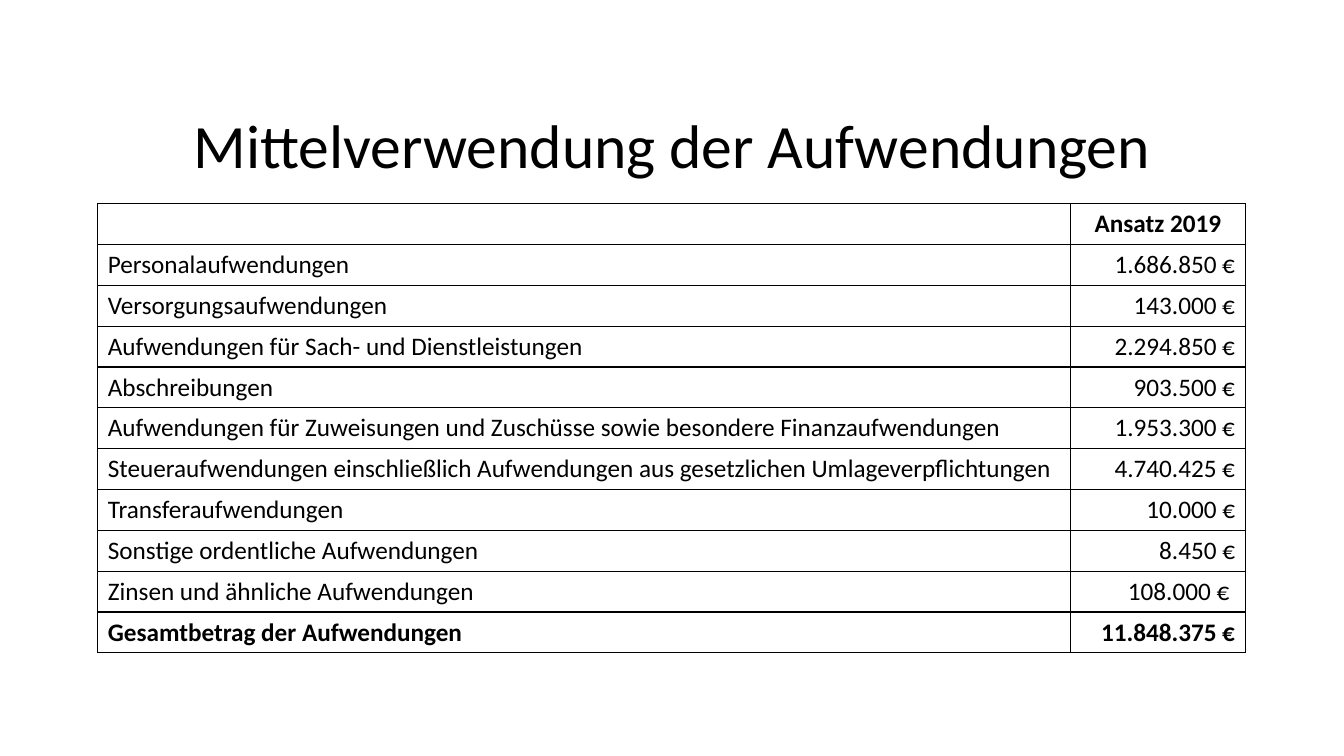
from dataclasses import dataclass

from lxml.etree import SubElement
from pptx import Presentation
from pptx.dml.color import RGBColor
from pptx.enum.text import MSO_ANCHOR as Anchor, PP_ALIGN as Align
from pptx.oxml.ns import qn
from pptx.slide import Slide
from pptx.table import _Cell as Cell
from pptx.text.text import TextFrame
from pptx.util import Inches, Pt

FONT = "Calibri"
BLACK = "000000"
TABLE_HEIGHT = 4.46
COLUMN_WIDTHS = (9.65, 1.73)


@dataclass(frozen=True)
class ExpenseRow:
    label: str
    amount: str
    bold: bool = False
    amount_align: Align = Align.RIGHT
    anchor: Anchor = Anchor.TOP


ROWS = (
    ExpenseRow("", "Ansatz 2019", bold=True, amount_align=Align.CENTER),
    ExpenseRow("Personalaufwendungen", "1.686.850 €"),
    ExpenseRow("Versorgungsaufwendungen", "143.000 €"),
    ExpenseRow("Aufwendungen für Sach- und Dienstleistungen", "2.294.850 €"),
    ExpenseRow("Abschreibungen", "903.500 €"),
    ExpenseRow("Aufwendungen für Zuweisungen und Zuschüsse sowie besondere Finanzaufwendungen",
               "1.953.300 €"),
    ExpenseRow("Steueraufwendungen einschließlich Aufwendungen aus gesetzlichen Umlageverpflichtungen",
               "4.740.425 €"),
    ExpenseRow("Transferaufwendungen", "10.000 €", anchor=Anchor.MIDDLE),
    ExpenseRow("Sonstige ordentliche Aufwendungen", "8.450 €", anchor=Anchor.MIDDLE),
    ExpenseRow("Zinsen und ähnliche Aufwendungen", "108.000 € "),
    ExpenseRow("Gesamtbetrag der Aufwendungen", "11.848.375 €", bold=True),
)


def color(hex_value: str) -> RGBColor:
    return RGBColor.from_string(hex_value)


def write_text(frame: TextFrame, text: str, size: float, align: Align, bold: bool = False) -> None:
    paragraph = frame.paragraphs[0]
    paragraph.alignment = align
    if not text:
        paragraph.font.size = Pt(size)
        return
    run = paragraph.add_run()
    run.text = text
    run.font.name = FONT
    run.font.size = Pt(size)
    run.font.bold = bold
    run.font.color.rgb = color(BLACK)


def add_borders(cell: Cell, hex_value: str, width: float) -> None:
    """Draw all four cell edges; call before setting the fill."""
    properties = cell._tc.get_or_add_tcPr()
    for edge in ("a:lnL", "a:lnR", "a:lnT", "a:lnB"):
        line = SubElement(properties, qn(edge), w=str(Pt(width)))
        fill = SubElement(line, qn("a:solidFill"))
        SubElement(fill, qn("a:srgbClr"), val=hex_value)


def add_title(slide: Slide, text: str) -> None:
    box = slide.shapes.add_textbox(Inches(0.92), Inches(1.1), Inches(11.5), Inches(0.75))
    frame = box.text_frame
    frame.word_wrap = True
    frame.vertical_anchor = Anchor.MIDDLE
    write_text(frame, text, 44, Align.CENTER)
    frame.paragraphs[0].line_spacing = 0.9


def add_expense_table(slide: Slide, rows: tuple[ExpenseRow, ...]) -> None:
    table = slide.shapes.add_table(
        len(rows), len(COLUMN_WIDTHS), Inches(0.97), Inches(2.02),
        Inches(sum(COLUMN_WIDTHS)), Inches(TABLE_HEIGHT),
    ).table
    table.first_row = False
    table.horz_banding = False
    for column, width in zip(table.columns, COLUMN_WIDTHS):
        column.width = Inches(width)
    for table_row, row in zip(table.rows, rows):
        contents = ((row.label, Align.LEFT), (row.amount, row.amount_align))
        for cell, (text, align) in zip(table_row.cells, contents):
            add_borders(cell, BLACK, 1)
            cell.fill.background()
            cell.vertical_anchor = row.anchor
            write_text(cell.text_frame, text, 18, align, row.bold)


def main() -> None:
    presentation = Presentation()
    presentation.slide_width = Inches(13.33)
    presentation.slide_height = Inches(7.5)
    slide = presentation.slides.add_slide(presentation.slide_layouts[6])
    add_title(slide, "Mittelverwendung der Aufwendungen")
    add_expense_table(slide, ROWS)
    presentation.save("out.pptx")


if __name__ == "__main__":
    main()
